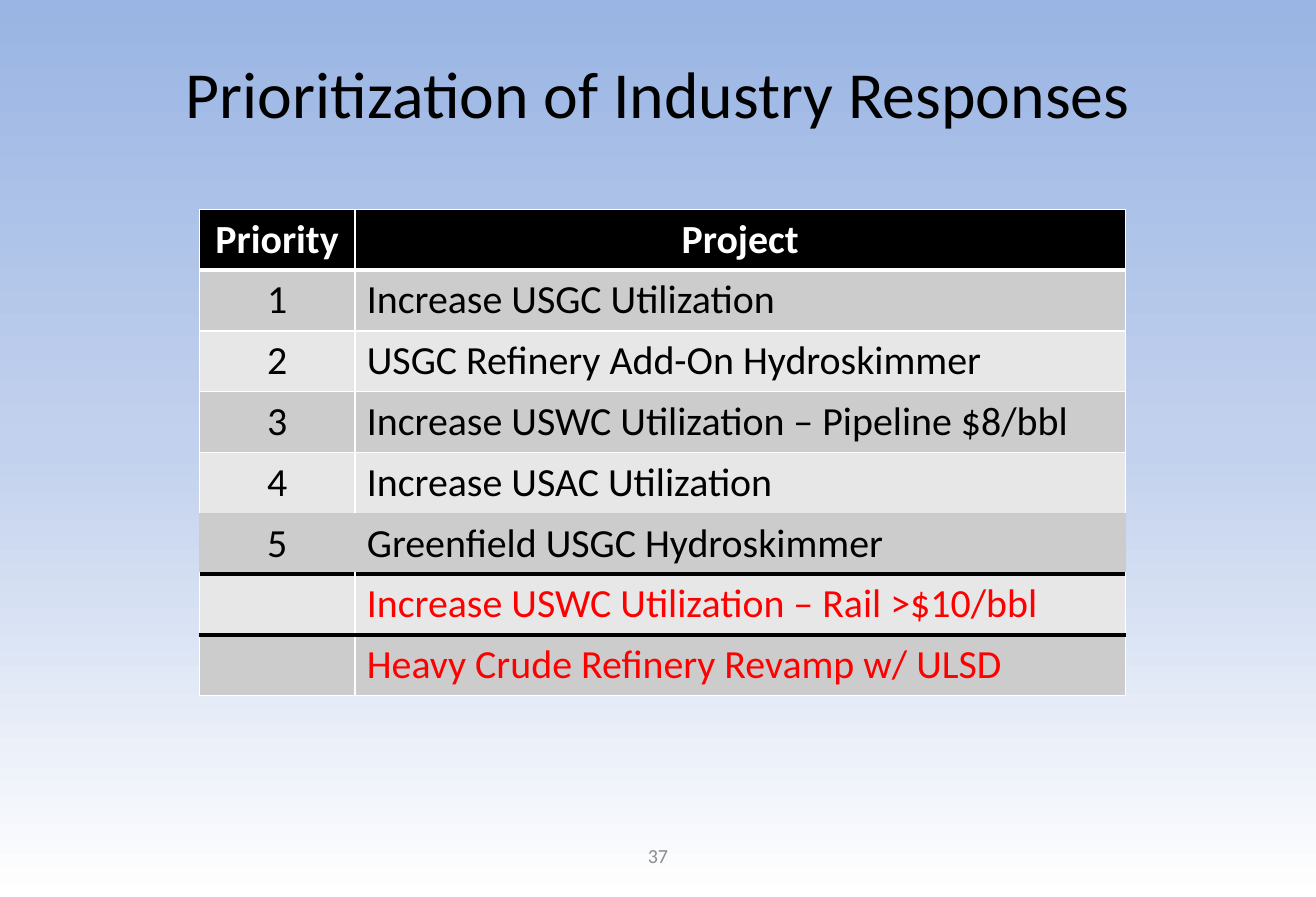
from copy import deepcopy

from pptx import Presentation
from pptx.dml.color import RGBColor
from pptx.enum.text import MSO_ANCHOR, MSO_AUTO_SIZE, PP_ALIGN
from pptx.oxml import parse_xml
from pptx.oxml.ns import nsdecls, qn
from pptx.util import Pt

EMU_PER_PX = 7620
FONT = "Calibri"
COLORS = {
    "black": "000000",
    "white": "FFFFFF",
    "red": "FF0000",
    "gray": "8C8C8C",
    "band_dark": "CCCCCC",
    "band_light": "E7E7E7",
}
BACKGROUND_STOPS = [(0, "9AB5E4"), (0.5, "C2D1ED"), (1, "FFFFFF")]
HEADINGS = ["Priority", "Project"]
RANKED_PROJECTS = [
    "Increase USGC Utilization",
    "USGC Refinery Add-On Hydroskimmer",
    "Increase USWC Utilization – Pipeline $8/bbl",
    "Increase USAC Utilization",
    "Greenfield USGC Hydroskimmer",
]
UNRANKED_PROJECTS = [
    "Increase USWC Utilization – Rail >$10/bbl",
    "Heavy Crude Refinery Revamp w/ ULSD",
]
THIN, THICK = ("white", 1), ("black", 3)


def px(length):
    return length * EMU_PER_PX


def write(frame, text, size=24, color="black", bold=False, align=PP_ALIGN.CENTER):
    para = frame.paragraphs[0]
    para.alignment = align
    para.font.size = Pt(size)
    if not text:
        # An empty cell takes its line height from the end-of-paragraph size.
        para._p.get_or_add_endParaRPr().set("sz", str(size * 100))
        return
    span = para.add_run()
    span.text = text
    span.font.name = FONT
    span.font.size = Pt(size)
    span.font.bold = bold
    span.font.color.rgb = RGBColor.from_string(COLORS[color])


def set_borders(cell, sides):
    """Draw the given sides as (color, points); the other sides get no line."""
    properties = cell._tc.get_or_add_tcPr()
    for side in "LRTB":
        color, points = sides.get(side, (None, 0))
        fill = (f'<a:solidFill><a:srgbClr val="{COLORS[color]}"/></a:solidFill>'
                if color else "<a:noFill/>")
        properties.append(parse_xml(
            f'<a:ln{side} {nsdecls("a")} w="{Pt(points)}">{fill}</a:ln{side}>'))


def row_borders(row):
    sides = dict.fromkeys("LRTB", THIN)
    last_ranked = len(RANKED_PROJECTS)
    if row == 0:
        sides["B"] = ("white", 3)
    elif row == 1:
        sides["T"] = ("white", 3)
    elif row == last_ranked - 1:
        del sides["B"]
    elif row == last_ranked:
        sides = {"B": THICK}
    elif row == last_ranked + 1:
        sides.update(T=THICK, B=THICK)
    elif row == last_ranked + 2:
        sides["T"] = THICK
    return sides


class SlideBuilder:
    def __init__(self, deck):
        self.page = deck.slides.add_slide(deck.slide_layouts[5])

    def background(self, stops):
        fill = self.page.background.fill
        fill.gradient()
        fill.gradient_angle = 270
        stop_list = self.page.element.find(".//" + qn("a:gsLst"))
        stop_list.append(deepcopy(stop_list[-1]))
        for stop, (position, color) in zip(fill.gradient_stops, stops):
            stop.position = position
            stop.color.rgb = RGBColor.from_string(color)

    def title(self, text, left, top, width, height):
        box = self.page.shapes.title
        box.left, box.top, box.width, box.height = map(px, (left, top, width, height))
        box.text_frame.auto_size = MSO_AUTO_SIZE.NONE
        box.text_frame.vertical_anchor = MSO_ANCHOR.MIDDLE
        write(box.text_frame, text, size=39.6)

    def text(self, text, left, top, width, height, **style):
        box = self.page.shapes.add_textbox(*map(px, (left, top, width, height)))
        box.text_frame.word_wrap = True
        box.text_frame.vertical_anchor = MSO_ANCHOR.MIDDLE
        write(box.text_frame, text, **style)

    def table(self, rows, left, top, widths, row_height):
        table = self.page.shapes.add_table(
            len(rows), len(widths), px(left), px(top),
            px(sum(widths)), px(row_height * len(rows))).table
        for column, width in zip(table.columns, widths):
            column.width = px(width)
        for row, values in enumerate(rows):
            header = row == 0
            band = "black" if header else "band_dark" if row % 2 else "band_light"
            color = ("white" if header else
                     "black" if row <= len(RANKED_PROJECTS) else "red")
            for column, value in enumerate(values):
                cell = table.cell(row, column)
                centered = header or column == 0
                set_borders(cell, row_borders(row))
                cell.fill.solid()
                cell.fill.fore_color.rgb = RGBColor.from_string(COLORS[band])
                cell.vertical_anchor = MSO_ANCHOR.BOTTOM if header else MSO_ANCHOR.TOP
                write(cell.text_frame, value, color=color, bold=header,
                      align=PP_ALIGN.CENTER if centered else PP_ALIGN.LEFT)


def main():
    deck = Presentation()
    deck.slide_width, deck.slide_height = px(1320), px(900)
    slide = SlideBuilder(deck)
    slide.background(BACKGROUND_STOPS)
    slide.title("Prioritization of Industry Responses", 132, 36, 1056, 114)
    rows = [HEADINGS]
    rows += [[str(rank), name] for rank, name in enumerate(RANKED_PROJECTS, 1)]
    rows += [["", name] for name in UNRANKED_PROJECTS]
    slide.table(rows, left=200, top=210, widths=[156, 773], row_height=61)
    slide.text("37", 451, 834, 418, 48, size=12, color="gray")
    deck.save("out.pptx")


if __name__ == "__main__":
    main()
